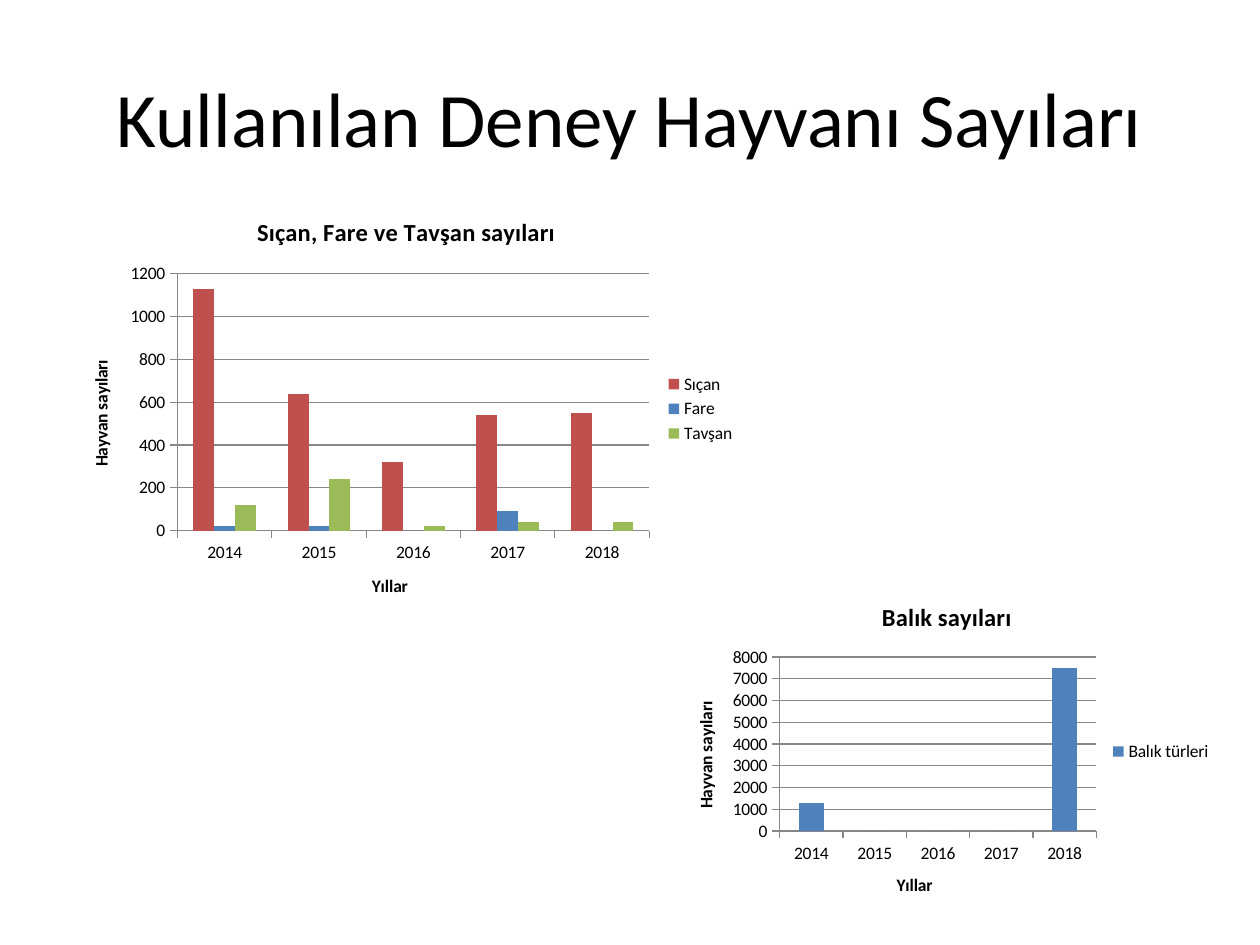
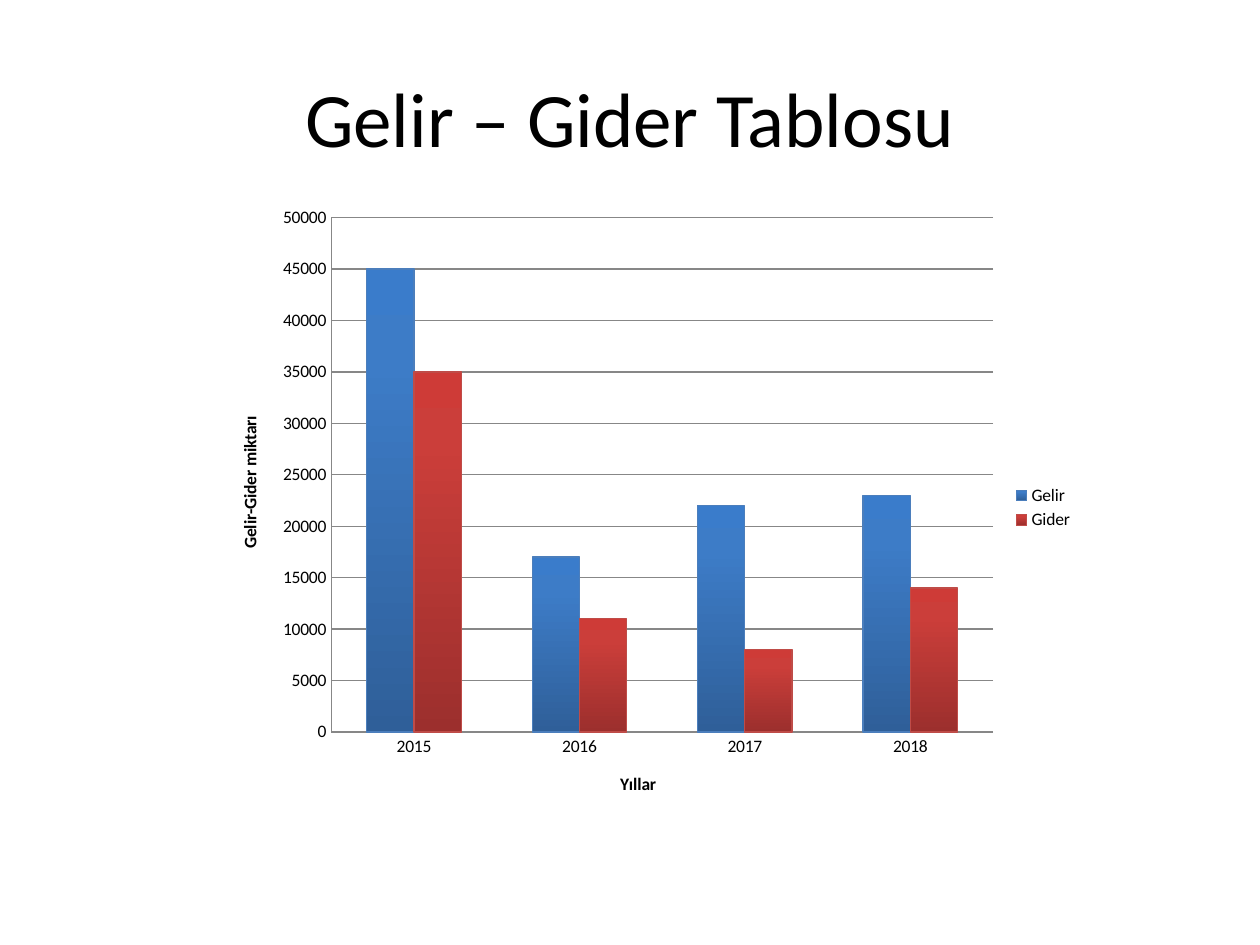
from lxml import etree
from pptx import Presentation
from pptx import util as u
from pptx.chart.data import CategoryChartData
from pptx.dml.color import RGBColor
from pptx.enum import chart as ch
from pptx.enum import text as tx
from pptx.oxml.ns import qn

FONT = "Calibri"
HEX = {"text": "000000", "grid": "878787", "page": "FFFFFF",
       "blue": "4F81BD", "red": "C0504D", "green": "9BBB59",
       "income": "4B7EBC", "spend": "BF4C48"}
FADES = {"income": [(0, "2F5F99"), (80, "3D7CC7"), (100, "3A7CCB")],
         "spend": [(0, "9C2F2D"), (80, "CB3E3A"), (100, "CE3B37")]}
YEARS = ["2014", "2015", "2016", "2017", "2018"]


def rgb(name):
    """Return the named colour."""
    return RGBColor.from_string(HEX[name])


def style(font, size=10, bold=False, color="text"):
    """Format a font."""
    font.name, font.size, font.bold = FONT, u.Pt(size), bold
    font.color.rgb = rgb(color)


def write(frame, words, align=tx.PP_ALIGN.CENTER, **form):
    """Put formatted words into a text frame."""
    para = frame.paragraphs[0]
    para.alignment = align
    run = para.add_run()
    run.text = words
    style(run.font, **form)


def page(deck, title):
    """Add a slide with its title."""
    slide = deck.slides.add_slide(deck.slide_layouts[5])
    slide.background.fill.solid()
    slide.background.fill.fore_color.rgb = rgb("page")
    box = slide.shapes.title
    box.left, box.top, box.width, box.height = map(u.Inches, (0.5, 0.3, 9, 1.25))
    box.text_frame.vertical_anchor = tx.MSO_ANCHOR.MIDDLE
    write(box.text_frame, title, size=44)
    return slide


def fade(series, name):
    """Give bars a vertical gradient and a thin outline."""
    series.format.fill.gradient()
    series.format.fill.gradient_angle = 90
    stops = series._element.find(".//" + qn("a:gsLst"))
    for old in list(stops):
        stops.remove(old)
    for pos, tone in FADES[name]:
        stop = etree.SubElement(stops, qn("a:gs"), pos=str(pos * 1000))
        etree.SubElement(stop, qn("a:srgbClr"), val=tone)
    series.format.line.color.rgb = rgb(name)
    series.format.line.width = u.Pt(0.75)


def paint(series, name):
    """Colour the bars of one series."""
    series.invert_if_negative = False
    if name in FADES:
        fade(series, name)
    else:
        series.format.fill.solid()
        series.format.fill.fore_color.rgb = rgb(name)


def label(axis, words, tick):
    """Set an axis title, its line and its tick marks."""
    write(axis.axis_title.text_frame, words, bold=True)
    axis.major_tick_mark = tick
    axis.minor_tick_mark = ch.XL_TICK_MARK.NONE
    axis.format.line.color.rgb = rgb("grid")
    style(axis.tick_labels.font)


def bars(slide, box, years, rows, unit, top, step, title=None,
         tick=ch.XL_TICK_MARK.OUTSIDE):
    """Draw a column chart inside a box."""
    data = CategoryChartData()
    data.categories = years
    for name, values, _ in rows:
        data.add_series(name, values)
    chart = slide.shapes.add_chart(ch.XL_CHART_TYPE.COLUMN_CLUSTERED,
                                   *map(u.Inches, box), data).chart
    style(chart.font)
    chart.has_title = title is not None
    if title:
        write(chart.chart_title.text_frame, title, size=14, bold=True)
        chart.chart_title.include_in_layout = False
    chart.has_legend = True
    chart.legend.position = ch.XL_LEGEND_POSITION.RIGHT
    chart.legend.include_in_layout = False
    style(chart.legend.font)
    label(chart.category_axis, "Yıllar", tick)
    axis = chart.value_axis
    label(axis, unit, tick)
    axis.minimum_scale, axis.maximum_scale, axis.major_unit = 0, top, step
    axis.has_major_gridlines = True
    axis.major_gridlines.format.line.color.rgb = rgb("grid")
    plot = chart.plots[0]
    plot.gap_width, plot.vary_by_categories = 150, False
    for series, (_, _, color) in zip(plot.series, rows):
        paint(series, color)


def animals(deck):
    """Build the slide of animal counts."""
    slide = page(deck, "Kullanılan Deney Hayvanı Sayıları")
    unit = "Hayvan sayıları"
    bars(slide, (0.51, 1.55, 5.43, 3.39), YEARS,
         [("Sıçan", (1130, 640, 320, 540, 550), "red"),
          ("Fare", (20, 20, 0, 90, 0), "blue"),
          ("Tavşan", (120, 240, 20, 40, 40), "green")],
         unit, 1200, 200, "Sıçan, Fare ve Tavşan sayıları")
    bars(slide, (5.31, 4.62, 4.41, 2.69), YEARS,
         [("Balık türleri", (1300, 0, 0, 0, 7500), "blue")],
         unit, 8000, 1000, "Balık sayıları")


def budget(deck):
    """Build the slide of income and spending."""
    slide = page(deck, "Gelir – Gider Tablosu")
    bars(slide, (1.69, 1.55, 6.93, 4.96), YEARS[1:],
         [("Gelir", (45000, 17000, 22000, 23000), "income"),
          ("Gider", (35000, 11000, 8000, 14000), "spend")],
         "Gelir-Gider miktarı", 50000, 5000, tick=ch.XL_TICK_MARK.NONE)


def main():
    """Build and save the deck."""
    deck = Presentation()
    deck.slide_width, deck.slide_height = u.Inches(10), u.Inches(7.5)
    animals(deck)
    budget(deck)
    deck.save("out.pptx")


if __name__ == "__main__":
    main()
